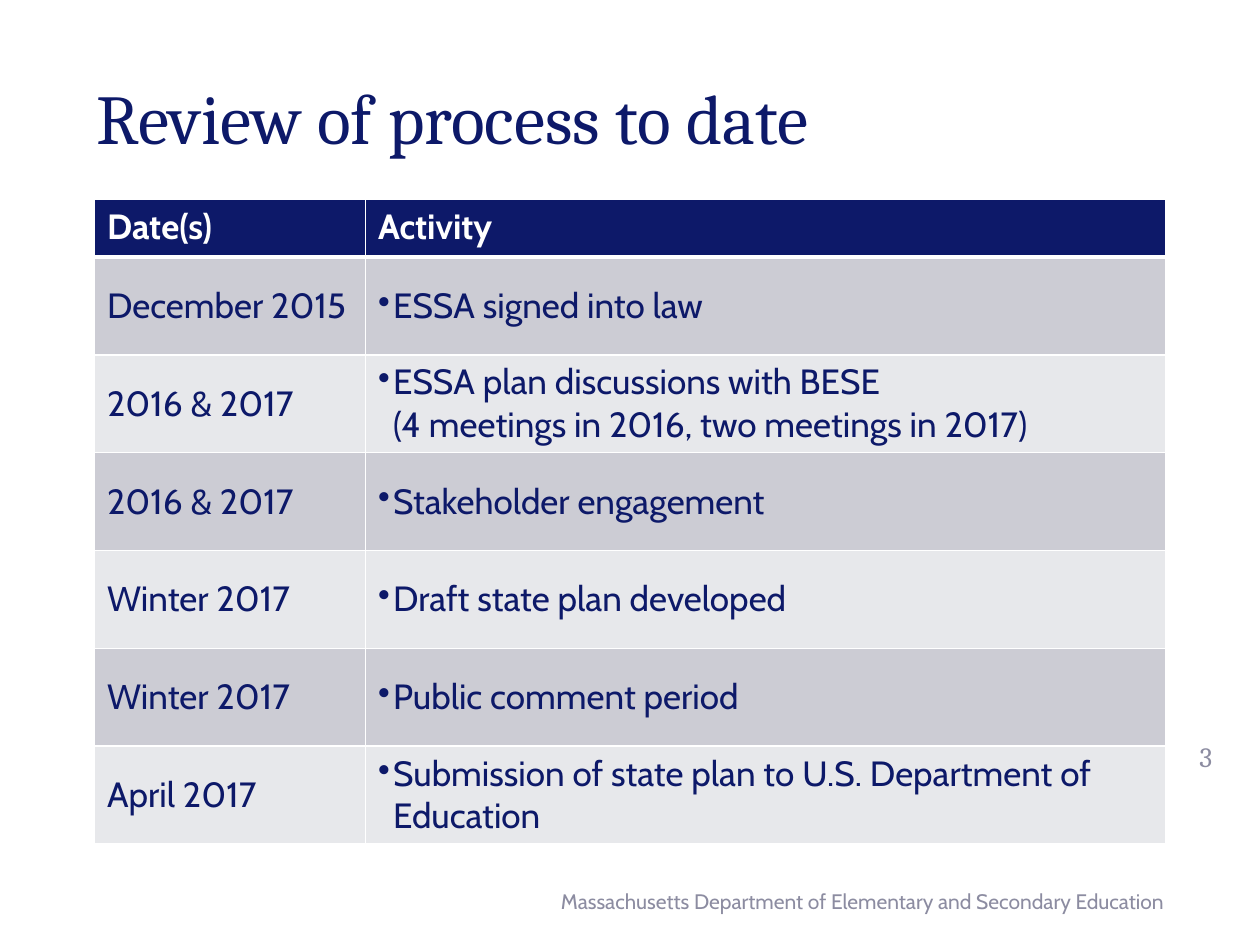
from dataclasses import dataclass

from lxml import etree
from pptx import Presentation
from pptx.dml.color import RGBColor
from pptx.enum.text import MSO_ANCHOR, PP_ALIGN
from pptx.oxml.ns import qn
from pptx.util import Inches, Pt

MIDDLE, TOP = MSO_ANCHOR.MIDDLE, MSO_ANCHOR.TOP
LEFT, CENTER, RIGHT = PP_ALIGN.LEFT, PP_ALIGN.CENTER, PP_ALIGN.RIGHT


@dataclass(frozen=True)
class Theme:
    navy: str = "0D1969"
    white: str = "FFFFFF"
    muted: str = "8C8CA1"
    bands: tuple = ("CCCCD4", "E7E8EB")
    heading_font: str = "Cambria"
    body_font: str = "Cabin"
    title_size: int = 40
    table_size: int = 20
    number_size: int = 16
    footer_size: int = 12
    thin_rule: int = 1
    header_rule: int = 3


theme = Theme()


def add_text(para, text, font, size, color, bold=False):
    """Add text to a paragraph, one run per line."""
    for index, line in enumerate(text.split("\n")):
        if index:
            para.add_line_break()
        span = para.add_run()
        span.text = line
        span.font.name = font
        span.font.size = Pt(size)
        span.font.bold = bold
        span.font.color.rgb = RGBColor.from_string(color)


def add_border(cell, side, width):
    properties = cell._tc.get_or_add_tcPr()
    line = etree.SubElement(properties, qn(f"a:ln{side}"), w=str(Pt(width)))
    fill = etree.SubElement(line, qn("a:solidFill"))
    etree.SubElement(fill, qn("a:srgbClr"), val=theme.white)


deck = Presentation()
deck.slide_width, deck.slide_height = Inches(10), Inches(7.5)
page = deck.slides.add_slide(deck.slide_layouts[6])

# Title, footer and page number
labels = [
    ("Review of process to date", (0.67, 0.3, 8.67, 1.25), LEFT,
     theme.heading_font, theme.title_size, theme.navy),
    ("Massachusetts Department of Elementary and Secondary Education",
     (3.42, 6.95, 5.92, 0.4), RIGHT,
     theme.body_font, theme.footer_size, theme.muted),
    ("3", (9.28, 5.75, 0.58, 0.5), CENTER,
     theme.heading_font, theme.number_size, theme.muted),
]
for text, place, alignment, font, size, color in labels:
    box = page.shapes.add_textbox(*[Inches(length) for length in place])
    frame = box.text_frame
    frame.word_wrap = True
    frame.vertical_anchor = MIDDLE
    para = frame.paragraphs[0]
    para.alignment = alignment
    add_text(para, text, font, size, color)

# Timeline table
rows = [
    ("Date(s)", "Activity"),
    ("December 2015", "ESSA signed into law"),
    ("2016 & 2017", "ESSA plan discussions with BESE \n"
                    "(4 meetings in 2016, two meetings in 2017)"),
    ("2016 & 2017", "Stakeholder engagement"),
    ("Winter 2017", "Draft state plan developed"),
    ("Winter 2017", "Public comment period"),
    ("April 2017", "Submission of state plan to U.S. Department of Education"),
]
column_widths = (2.15, 6.35)
table_height, header_height = 5.12, 0.46
body_height = (table_height - header_height) / (len(rows) - 1)

table = page.shapes.add_table(
    len(rows), len(column_widths), Inches(0.75), Inches(1.58),
    Inches(sum(column_widths)), Inches(table_height)).table
for column, width in zip(table.columns, column_widths):
    column.width = Inches(width)

for row_index, row in enumerate(rows):
    is_header = row_index == 0
    table.rows[row_index].height = Inches(header_height if is_header else body_height)
    fill_color = theme.navy if is_header else theme.bands[(row_index - 1) % 2]
    for column_index, text in enumerate(row):
        cell = table.cell(row_index, column_index)
        for side in "LRTB":
            under_header = (side, row_index) in (("B", 0), ("T", 1))
            add_border(cell, side, theme.header_rule if under_header else theme.thin_rule)
        cell.fill.solid()
        cell.fill.fore_color.rgb = RGBColor.from_string(fill_color)
        cell.vertical_anchor = TOP if is_header else MIDDLE
        para = cell.text_frame.paragraphs[0]
        if column_index == 1 and not is_header:
            properties = para._p.get_or_add_pPr()
            properties.set("marL", str(Inches(0.12)))
            properties.set("indent", str(Inches(-0.12)))
            etree.SubElement(properties, qn("a:buChar"), char="•")
        add_text(para, text, theme.body_font, theme.table_size,
                 theme.white if is_header else theme.navy, bold=is_header)

deck.save("out.pptx")
